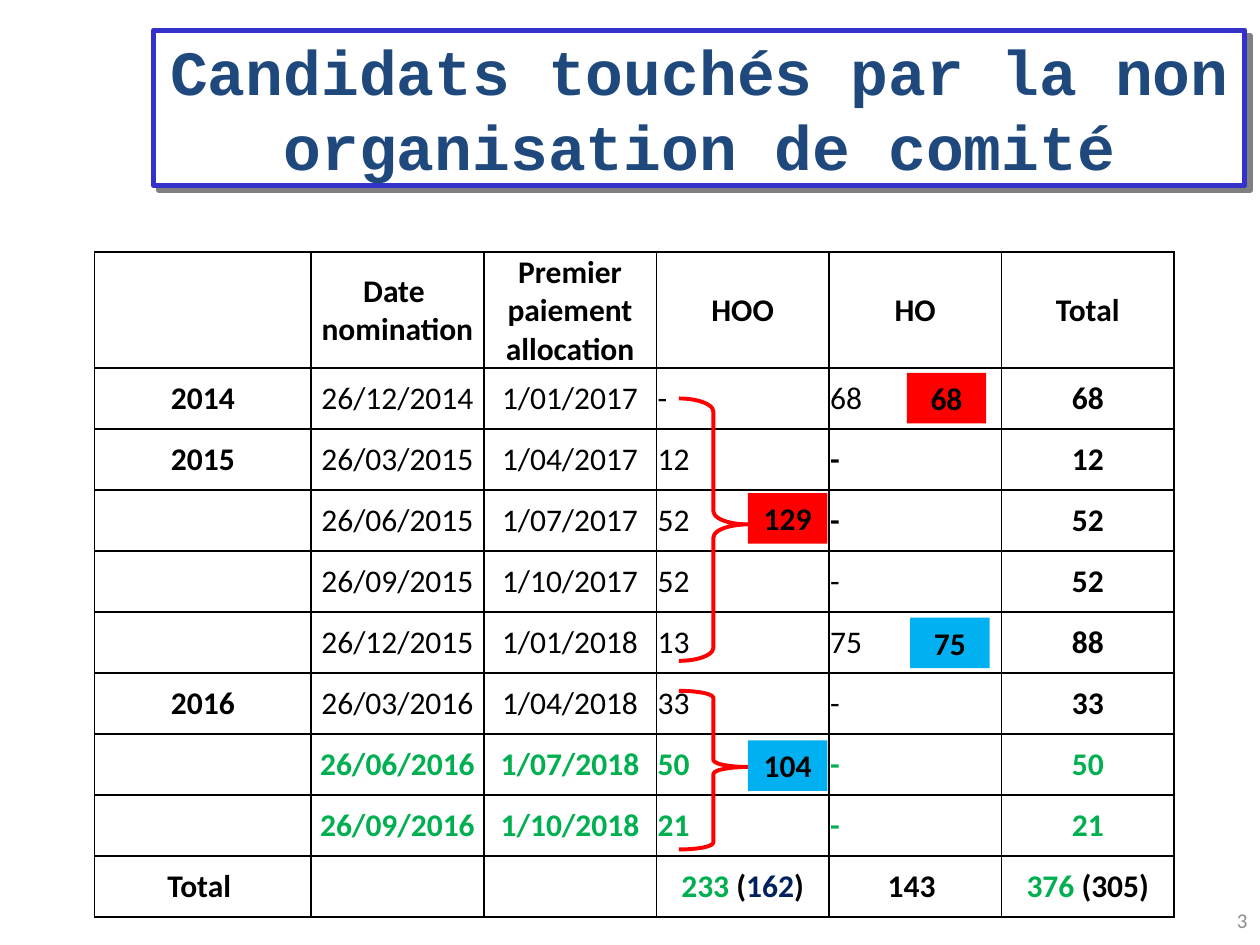
"""Build the slide on candidates affected by the missing committee."""
from dataclasses import dataclass
from typing import NamedTuple

from lxml import etree
from pptx import Presentation
from pptx.dml.color import RGBColor
from pptx.enum.shapes import MSO_SHAPE
from pptx.enum.text import MSO_ANCHOR, MSO_AUTO_SIZE, PP_ALIGN
from pptx.util import Inches, Pt

BRACE, RECT = MSO_SHAPE.RIGHT_BRACE, MSO_SHAPE.RECTANGLE
LEFT, MID, RIGHT = PP_ALIGN.LEFT, PP_ALIGN.CENTER, PP_ALIGN.RIGHT
TOP, HALF = MSO_ANCHOR.TOP, MSO_ANCHOR.MIDDLE
FIXED, GROW = MSO_AUTO_SIZE.NONE, MSO_AUTO_SIZE.SHAPE_TO_FIT_TEXT

BLACK = RGBColor(0x00, 0x00, 0x00)
WHITE = RGBColor(0xFF, 0xFF, 0xFF)
GRAY = RGBColor(0x8C, 0x8C, 0x8C)
BLUE = RGBColor(0x33, 0x33, 0xCC)
STEEL = RGBColor(0x1F, 0x49, 0x7D)
NAVY = RGBColor(0x00, 0x20, 0x60)
GREEN = RGBColor(0x00, 0xB0, 0x50)
RED = RGBColor(0xFF, 0x00, 0x00)
SKY = RGBColor(0x00, 0xB0, 0xF0)

NS = "http://schemas.openxmlformats.org/drawingml/2006/main"
SANS, MONO = "Calibri", "Courier New"
WIDE, HIGH = 10, 7.5
EDGE, CREST = 0.75, 2
FIRST, COL, HEAD = 1.72, 1.37, 0.92
COLS, ROWS = 6, 9
ROW = (5.28 - HEAD) / ROWS


class Run(NamedTuple):
    """A stretch of text in one colour."""
    text: str
    tint: RGBColor


@dataclass
class Line:
    """A table row, its colour, and the columns set bold or flush left."""
    cells: list
    tint: RGBColor = BLACK
    bold: tuple = (0, 5)
    flush: tuple = (3, 4)


@dataclass
class Badge:
    """A coloured subtotal placed by table column and row."""
    text: str
    col: float
    row: float
    fill: RGBColor


@dataclass
class Brace:
    """A red brace placed by table row, spanning some rows."""
    row: float
    span: float
    bend: float


ALL = tuple(range(COLS))
LINES = [
    Line(["", "Date \nnomination", "Premier paiement allocation", "HOO", "HO", "Total"],
         bold=ALL, flush=()),
    Line(["2014", "26/12/2014", "1/01/2017", "-", "68", "68"]),
    Line(["2015", "26/03/2015", "1/04/2017", "12", "-", "12"], bold=(0, 4, 5)),
    Line(["", "26/06/2015", "1/07/2017", "52", "-", "52"], bold=(0, 4, 5)),
    Line(["", "26/09/2015", "1/10/2017", "52", "-", "52"]),
    Line(["", "26/12/2015", "1/01/2018", "13", "75", "88"]),
    Line(["2016", "26/03/2016", "1/04/2018", "33", "-", "33"]),
    Line(["", "26/06/2016", "1/07/2018", "50", "-", "50"], GREEN, ALL),
    Line(["", "26/09/2016", "1/10/2018", "21", "-", "21"], GREEN, ALL),
    Line(["Total ", "", "",
          [Run("233 ", GREEN), Run("(", BLACK), Run("162", NAVY), Run(")", BLACK)],
          "143 ", [Run("376", GREEN), Run(" (305)", BLACK)]], bold=ALL, flush=()),
]
BRACES = [Brace(0.5, 4.3, 0.19), Brace(5.29, 2.6, 0.1)]
BADGES = [
    Badge("129", 3.53, 2.05, RED),
    Badge("68", 4.45, 0.08, RED),
    Badge("75", 4.47, 4.09, SKY),
    Badge("104", 3.53, 6.1, SKY),
]


def share(left: float, top: float, width: float, height: float) -> list:
    """Turn percentages of the slide into lengths."""
    return [Inches(part * full / 100)
            for part, full in zip((left, top, width, height), (WIDE, HIGH) * 2)]


def grid(col: float, row: float, width: float, height: float) -> list:
    """Turn table columns and rows into lengths."""
    return [Inches(EDGE + FIRST + COL * (col - 1)), Inches(CREST + HEAD + ROW * row),
            Inches(COL * width), Inches(ROW * height)]


def style(par, size: float, tint: RGBColor, bold: bool, align, face: str = SANS) -> None:
    """Set the font and alignment of a paragraph."""
    font = par.font
    font.name, font.size, font.bold = face, Pt(size), bold
    font.color.rgb = tint
    par.alignment = align


def write(cell, line: Line, col: int) -> None:
    """Write one entry of a row into its cell."""
    item, frame = line.cells[col], cell.text_frame
    if isinstance(item, str):
        frame.text = item
    else:
        for part in item:
            run = frame.paragraphs[0].add_run()
            run.text = part.text
            run.font.color.rgb = part.tint
    for par in frame.paragraphs:
        style(par, 18, line.tint, col in line.bold, LEFT if col in line.flush else MID)


def frame_cell(cell) -> None:
    """Give a cell a white fill, tight margins and thin black borders."""
    cell.fill.solid()
    cell.fill.fore_color.rgb = WHITE
    cell.vertical_anchor = HALF
    cell.margin_left = cell.margin_right = cell.margin_top = Inches(0.01)
    cell.margin_bottom = 0
    props = cell._tc.get_or_add_tcPr()
    for spot, side in enumerate(("lnL", "lnR", "lnT", "lnB")):
        props.insert(spot, etree.fromstring(
            f'<a:{side} xmlns:a="{NS}" w="12700"><a:solidFill>'
            f'<a:srgbClr val="{BLACK}"/></a:solidFill></a:{side}>'))


def add_grid(slide) -> None:
    """Draw the table."""
    area = [Inches(n) for n in (EDGE, CREST, FIRST + COL * (COLS - 1), HEAD + ROW * ROWS)]
    table = slide.shapes.add_table(ROWS + 1, COLS, *area).table
    table.first_row = table.horz_banding = False
    for spot, col in enumerate(table.columns):
        col.width = Inches(COL if spot else FIRST)
    for spot, line in enumerate(LINES):
        table.rows[spot].height = Inches(ROW if spot else HEAD)
        for col in ALL:
            cell = table.cell(spot, col)
            write(cell, line, col)
            frame_cell(cell)


def add_title(slide) -> None:
    """Turn the title into a rounded panel with a shadow."""
    title = slide.shapes.title
    title.left, title.top, title.width, title.height = share(12.2, 3.2, 86.6, 16.4)
    props = title._element.spPr
    props.append(etree.fromstring(
        f'<a:prstGeom xmlns:a="{NS}" prst="roundRect"><a:avLst/></a:prstGeom>'))
    title.fill.solid()
    title.fill.fore_color.rgb = WHITE
    title.line.color.rgb = BLUE
    title.line.width = Pt(3)
    props.append(etree.fromstring(
        f'<a:effectLst xmlns:a="{NS}"><a:outerShdw dist="53340" dir="2700000" algn="ctr" '
        'rotWithShape="0"><a:srgbClr val="808080"/></a:outerShdw></a:effectLst>'))
    frame = title.text_frame
    frame.text = "Candidats touchés par la non organisation de comité"
    frame.auto_size, frame.vertical_anchor = FIXED, HALF
    style(frame.paragraphs[0], 36, STEEL, True, MID, MONO)


def add_number(slide) -> None:
    """Write the slide number."""
    frame = slide.shapes.add_textbox(*share(82.3, 94.67, 17.7, 5.33)).text_frame
    frame.text, frame.word_wrap, frame.vertical_anchor = "3", True, HALF
    style(frame.paragraphs[0], 12, GRAY, False, RIGHT)


def add_brace(slide, brace: Brace) -> None:
    """Draw a brace beside a group of rows."""
    shape = slide.shapes.add_shape(BRACE, *grid(3.13, brace.row, 0.4, brace.span))
    shape.adjustments[0], shape.adjustments[1] = brace.bend, 0.48
    shape.shadow.inherit = False
    shape.fill.background()
    shape.line.color.rgb = RED
    shape.line.width = Pt(2.25)


def add_badge(slide, badge: Badge) -> None:
    """Draw a subtotal badge."""
    shape = slide.shapes.add_shape(RECT, *grid(badge.col, badge.row, 0.46, 0.83))
    shape.shadow.inherit = False
    shape.fill.solid()
    shape.fill.fore_color.rgb = badge.fill
    shape.line.fill.background()
    frame = shape.text_frame
    frame.text, frame.auto_size, frame.vertical_anchor = badge.text, GROW, TOP
    style(frame.paragraphs[0], 18, BLACK, True, MID)


def main() -> None:
    """Build and save the slide."""
    deck = Presentation()
    deck.slide_width, deck.slide_height = Inches(WIDE), Inches(HIGH)
    slide = deck.slides.add_slide(deck.slide_layouts[5])
    add_number(slide)
    add_title(slide)
    add_grid(slide)
    for brace in BRACES:
        add_brace(slide, brace)
    for badge in BADGES:
        add_badge(slide, badge)
    deck.save("out.pptx")


if __name__ == "__main__":
    main()
